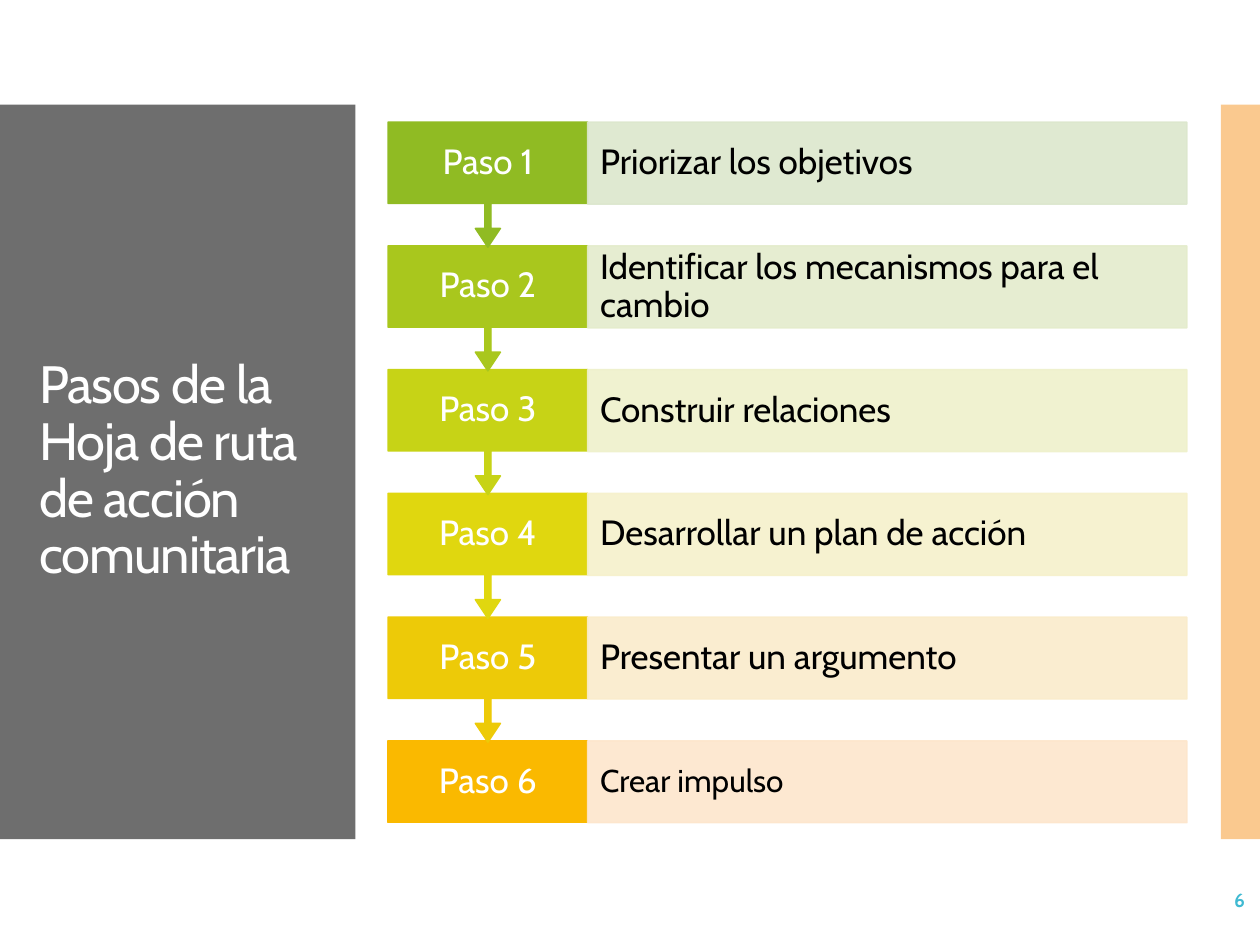
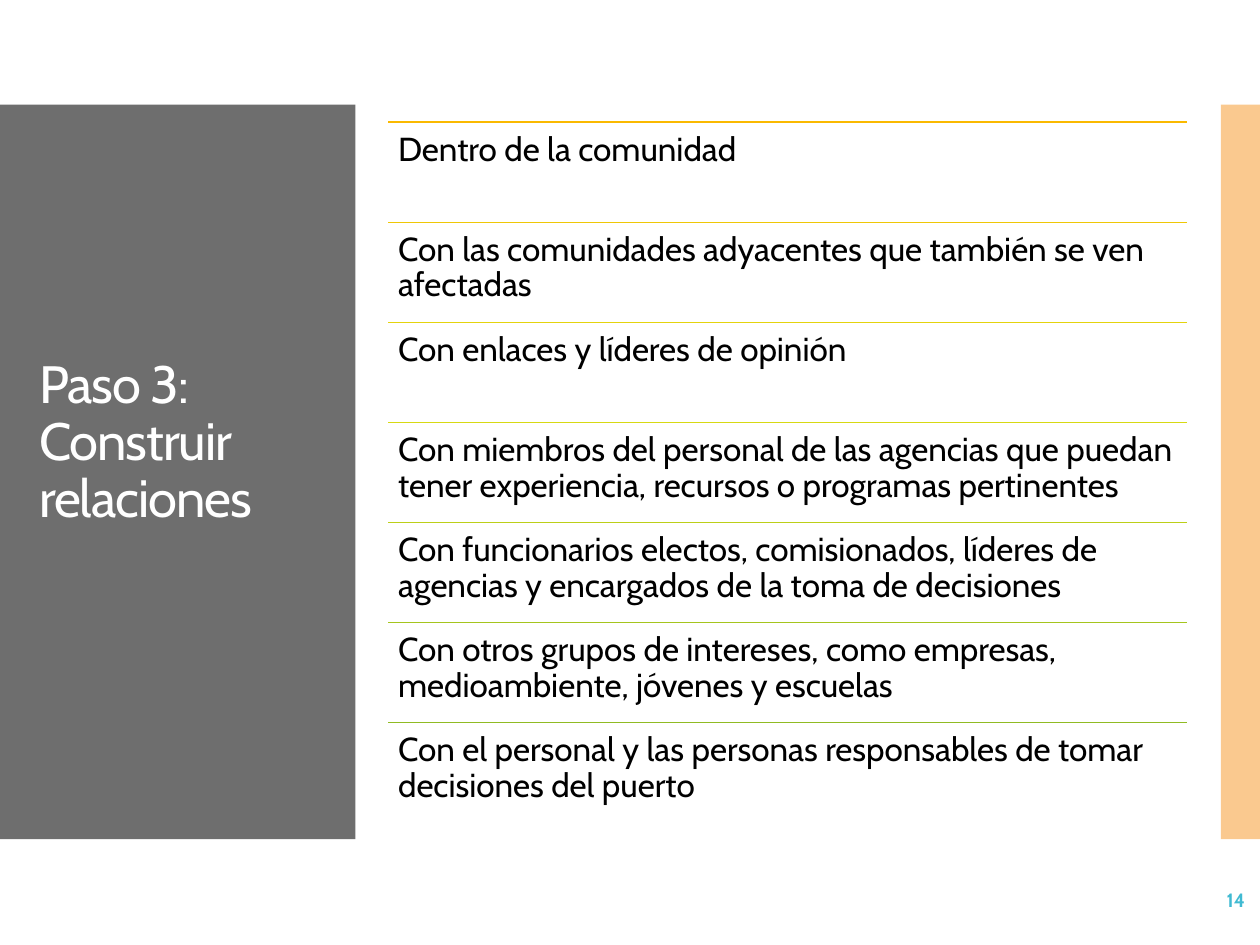
from lxml import etree
from pptx import Presentation
from pptx.dml.color import RGBColor
from pptx.enum.shapes import MSO_CONNECTOR, MSO_SHAPE
from pptx.enum.text import MSO_ANCHOR, PP_ALIGN
from pptx.oxml.ns import qn
from pptx.util import Inches, Pt

RECT, CALLOUT = MSO_SHAPE.RECTANGLE, MSO_SHAPE.DOWN_ARROW_CALLOUT
STRAIGHT = MSO_CONNECTOR.STRAIGHT
TOP, MIDDLE = MSO_ANCHOR.TOP, MSO_ANCHOR.MIDDLE
LEFT, CENTER, RIGHT = PP_ALIGN.LEFT, PP_ALIGN.CENTER, PP_ALIGN.RIGHT

FONT = "Cabin"
WHITE = RGBColor(0xFF, 0xFF, 0xFF)
BLACK = RGBColor(0x00, 0x00, 0x00)
GRAY = RGBColor(0x6E, 0x6E, 0x6E)
ORANGE = RGBColor(0xF7, 0x94, 0x21)
AQUA = RGBColor(0x40, 0xBA, 0xD2)

# Shared grid, in inches
BAND_TOP, BAND_H = 0.83, 5.83
GRID_X, GRID_Y, GRID_RIGHT, GRID_BOTTOM = 3.08, 0.97, 9.42, 6.53
GRID_W = GRID_RIGHT - GRID_X
LABEL_W = GRID_W / 4
LINE_W = Pt(0.85)

STEPS = [
    ("Priorizar los objetivos", 20, "90BB23", "DCE7CD"),
    ("Identificar los mecanismos para el cambio", 20, "A9C71D", "E4ECCC"),
    ("Construir relaciones", 20, "C7D316", "EFF1CB"),
    ("Desarrollar un plan de acción", 20, "E0D70F", "F6F1CB"),
    ("Presentar un argumento", 20, "EDCA08", "FAECCB"),
    ("Crear impulso", 18, "FAB900", "FDE6CC"),
]
RELATIONS = [
    ("Dentro de la comunidad", "FAB900"),
    ("Con las comunidades adyacentes que también se ven afectadas", "EFC706"),
    ("Con enlaces y líderes de opinión", "E4D30D"),
    ("Con miembros del personal de las agencias que puedan tener experiencia, "
     "recursos o programas pertinentes", "D7D913"),
    ("Con funcionarios electos, comisionados, líderes de agencias y encargados "
     "de la toma de decisiones", "BCCF18"),
    ("Con otros grupos de intereses, como empresas, medioambiente, jóvenes y "
     "escuelas", "A5C51E"),
    ("Con el personal y las personas responsables de tomar decisiones del "
     "puerto", "90BB23"),
]


def add_box(s, kind, x, y, w, h, color, alpha=100):
    """Add a filled shape with a matching outline; alpha is opacity in percent."""
    sp = s.shapes.add_shape(kind, Inches(x), Inches(y), Inches(w), Inches(h))
    sp.shadow.inherit = False
    sp.fill.solid()
    sp.fill.fore_color.rgb = color
    sp.line.color.rgb = color
    sp.line.width = LINE_W
    if alpha < 100:
        for clr in sp.element.spPr.iter(qn("a:srgbClr")):
            etree.SubElement(clr, qn("a:alpha"), val=str(alpha * 1000))
    return sp


def write(sp, text, size, color, align=LEFT, anchor=MIDDLE, inset=(0.1, 0.05)):
    """Set and format one paragraph; inset is (horizontal, vertical) inches."""
    tf = sp.text_frame
    tf.text = text
    tf.word_wrap = True
    tf.vertical_anchor = anchor
    tf.margin_left = tf.margin_right = Inches(inset[0])
    tf.margin_top = tf.margin_bottom = Inches(inset[1])
    p = tf.paragraphs[0]
    p.alignment = align
    p.line_spacing = 0.9
    r = p.runs[0]
    r.font.name = FONT
    r.font.size = Pt(size)
    r.font.color.rgb = color
    return r


prs = Presentation()
prs.slide_width, prs.slide_height = Inches(10), Inches(7.5)
layout = prs.slide_layouts[5]
title = layout.placeholders[0]
title.left, title.top = Inches(0.21), Inches(1.23)
title.width, title.height = Inches(2.42), Inches(5.03)

# Titles and page numbers
slides = []
for heading, number in [("Pasos de la Hoja de ruta de acción comunitaria", "6"),
                        ("Paso 3: Construir relaciones", "14")]:
    s = prs.slides.add_slide(layout)
    r = write(s.shapes.title, heading, 30, WHITE)
    r.font._element.set("spc", "-60")
    sp = s.shapes.add_textbox(Inches(8.72), Inches(6.95), Inches(1.26), Inches(0.4))
    write(sp, number, 11, AQUA, RIGHT).font.bold = True
    slides.append(s)
steps_slide, relations_slide = slides

# Side bands, moved to the back of the shared layout
for x, w, color, alpha in [(0, 2.82, GRAY, 100), (9.69, 0.31, ORANGE, 50)]:
    band = add_box(steps_slide, RECT, x, BAND_TOP, w, BAND_H, color, alpha)
    band.line.fill.background()
    layout.shapes.element.insert(2, band.element)

# Six steps, drawn from the last so that each arrow tip lies on the next step
STEP_H = 0.65
step_pitch = (GRID_BOTTOM - GRID_Y - STEP_H) / (len(STEPS) - 1)
for i, (text, size, strong, pale) in reversed(list(enumerate(STEPS))):
    y = GRID_Y + i * step_pitch
    last = i == len(STEPS) - 1
    if last:
        label = add_box(steps_slide, RECT, GRID_X, y, LABEL_W, STEP_H,
                        RGBColor.from_string(strong))
    else:
        label = add_box(steps_slide, CALLOUT, GRID_X, y, LABEL_W, step_pitch + 0.01,
                        RGBColor.from_string(strong))
        for k, share in enumerate((0.05, 0.1, 0.15, 0.65)):
            label.adjustments[k] = share
    write(label, f"Paso {i + 1}", 20, WHITE, CENTER, inset=(0.11, 0))
    detail = add_box(steps_slide, RECT, GRID_X + LABEL_W, y, GRID_W - LABEL_W,
                     STEP_H, RGBColor.from_string(pale), 90)
    write(detail, text, size, BLACK, inset=(0.1, 0))

# Ruled list of relations; the title sits one line higher here
relations_slide.shapes.title.text_frame.margin_bottom = Inches(0.5)
row_h = (GRID_BOTTOM - GRID_Y) / len(RELATIONS)
for i, (text, color) in enumerate(RELATIONS):
    y = Inches(GRID_Y + i * row_h)
    rule = relations_slide.shapes.add_connector(
        STRAIGHT, Inches(GRID_X), y, Inches(GRID_RIGHT), y)
    rule.line.color.rgb = RGBColor.from_string(color)
    rule.line.width = LINE_W
    etree.SubElement(rule.element.spPr, qn("a:effectLst"))
    sp = relations_slide.shapes.add_textbox(
        Inches(GRID_X), y, Inches(GRID_W), Inches(row_h))
    write(sp, text, 19, BLACK, anchor=TOP, inset=(0.08, 0.08))

prs.save("out.pptx")
